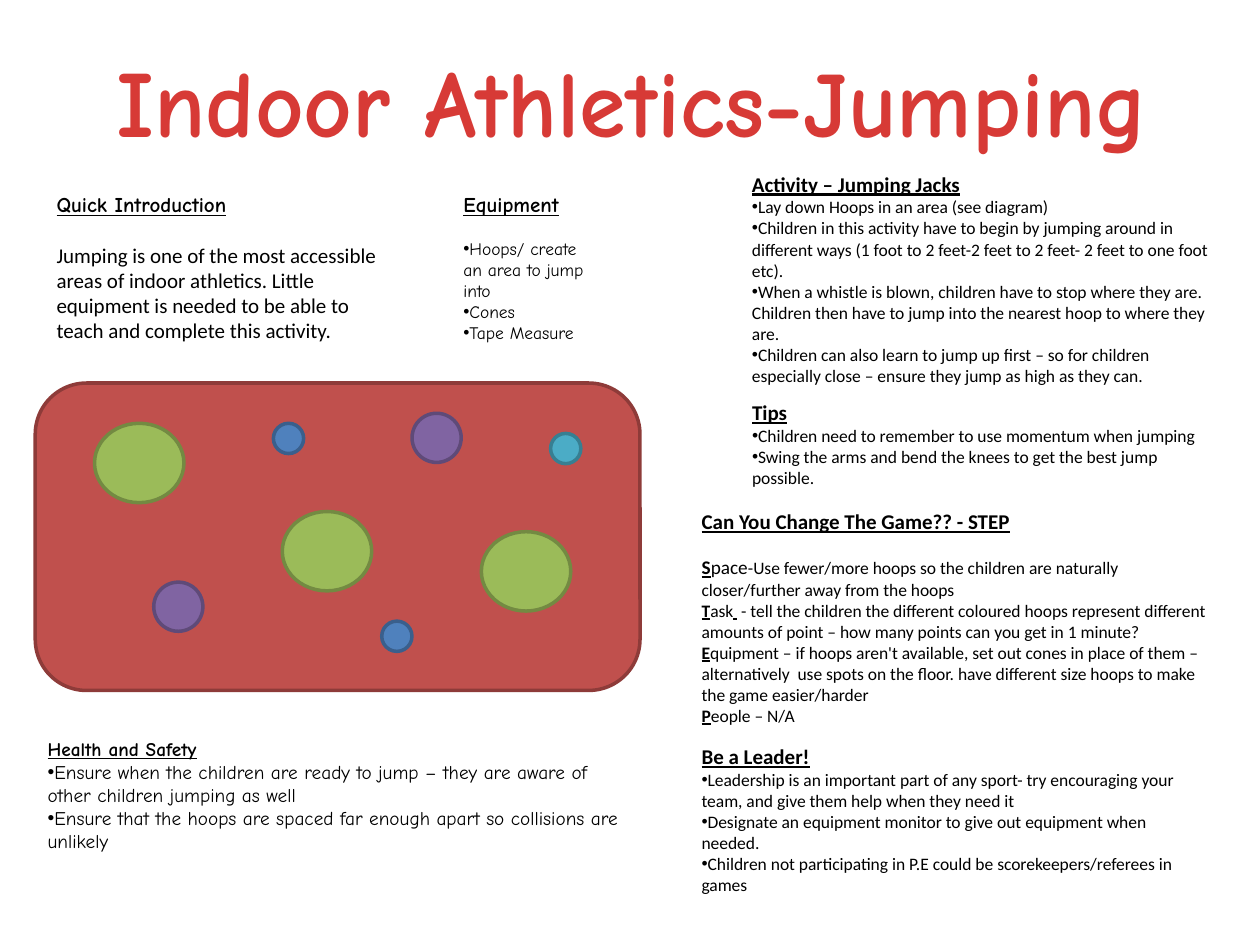
from pptx import Presentation
from pptx.dml.color import RGBColor
from pptx.enum.shapes import MSO_SHAPE
from pptx.enum.text import MSO_AUTO_SIZE, PP_ALIGN
from pptx.oxml.ns import qn
from pptx.util import Inches, Pt
from lxml import etree

OVAL = MSO_SHAPE.OVAL
ROUNDED = MSO_SHAPE.ROUNDED_RECTANGLE
GROW = MSO_AUTO_SIZE.SHAPE_TO_FIT_TEXT
CENTER = PP_ALIGN.CENTER

THEME = {
    "comic": "Comic Neue", "plain": "Calibri", "bullet": "Arial",
    "title": "D73A36", "text": "000000",
    "title_size": 54, "heading_size": 12, "safety_size": 11, "body_size": 10,
    "outline": 2,
    "mat": ("C0504D", "8E3B39"),
    "green": ("9BBB59", "738A42"),
    "purple": ("8064A2", "5F4A78"),
    "blue": ("4F81BD", "3A5F8C"),
    "aqua": ("4BACC6", "377F92"),
}
HEADING, BODY, SAFETY = THEME["heading_size"], THEME["body_size"], THEME["safety_size"]
COMIC, PLAIN = THEME["comic"], THEME["plain"]

TITLE = ("Indoor Athletics-Jumping", (0.03, 0.29, 9.97, 1.01))

SECTIONS = [
    {"heading": "Quick Introduction", "at": (0.35, 1.47, 2.91, 1.31),
     "font": COMIC, "body_font": PLAIN, "body_size": HEADING, "gap": 14.6, "bullets": False,
     "body": ["Jumping is one of the most accessible areas of indoor athletics. Little equipment "
              "is needed to be able to teach and complete this activity."]},
    {"heading": "Equipment", "at": (3.58, 1.47, 1.26, 1.31), "font": COMIC, "gap": 12,
     "body": ["Hoops/ create an area to jump into", "Cones", "Tape Measure"]},
    {"heading": "Activity – Jumping Jacks", "at": (5.87, 1.31, 3.86, 2.15),
     "body": ["Lay down Hoops in an area (see diagram)",
              "Children in this activity have to begin by jumping around in different ways "
              "(1 foot to 2 feet-2 feet to 2 feet- 2 feet to one foot etc).",
              "When a whistle is blown, children have to stop where they are. Children then "
              "have to jump into the nearest hoop to where they are.",
              "Children can also learn to jump up first – so for children especially close – "
              "ensure they jump as high as they can."]},
    {"heading": "Tips", "at": (5.87, 3.12, 3.82, 0.98),
     "body": ["Children need to remember to use momentum when jumping",
              "Swing the arms and bend the knees to get the best jump possible."]},
    {"heading": "Can You Change The Game?? - STEP", "at": (5.47, 3.99, 4.25, 1.83),
     "gap": 12.2, "bullets": False,
     "body": [[("S", True, 11), ("pace", False, 11),
               ("-Use fewer/more hoops so the children are naturally closer/further away "
                "from the hoops", False, BODY)],
              [("T", True, BODY), ("ask", False, BODY), (" ", True, BODY),
               (" - tell the children the different coloured hoops represent different amounts "
                "of point – how many points can you get in 1 minute?", False, BODY)],
              [("E", True, BODY),
               ("quipment – if hoops aren't available, set out cones in place of them – "
                "alternatively  use spots on the floor. have different size hoops to make the "
                "game easier/harder", False, BODY)],
              [("P", True, BODY), ("eople – N/A", False, BODY)]]},
    {"heading": "Health and Safety", "at": (0.28, 5.8, 4.8, 1.03),
     "font": COMIC, "heading_size": SAFETY, "body_size": SAFETY,
     "body": ["Ensure when the children are ready to jump – they are aware of other children "
              "jumping as well",
              "Ensure that the hoops are spaced far enough apart so collisions are unlikely"]},
    {"heading": "Be a Leader!", "at": (5.47, 5.85, 4.17, 1.65),
     "body": ["Leadership is an important part of any sport- try encouraging your team, and "
              "give them help when they need it",
              "Designate an equipment monitor to give out equipment when needed.",
              "Children not participating in P.E could be scorekeepers/referees in games"]},
]

MAT = (0.28, 3.04, 4.8, 2.44)
HOOP_SIZES = {"green": (0.71, 0.63), "purple": (0.39, 0.39),
              "blue": (0.24, 0.24), "aqua": (0.24, 0.24)}
HOOPS = [
    ("green", 0.75, 3.36), ("purple", 3.27, 3.28), ("green", 2.24, 4.06),
    ("blue", 2.17, 3.36), ("purple", 1.22, 4.62), ("blue", 3.03, 4.93),
    ("aqua", 4.37, 3.44), ("green", 3.82, 4.22),
]


def add_box(page, at):
    box = page.shapes.add_textbox(*map(Inches, at))
    box.text_frame.word_wrap = True
    box.text_frame.auto_size = GROW
    return box.text_frame


def style(span, font, size, bold=False, underline=False, colour=THEME["text"]):
    span.font.name = font
    span.font.size = Pt(size)
    span.font.bold = bold
    span.font.underline = underline
    span.font.color.rgb = RGBColor.from_string(colour)


def add_bullet(para):
    properties = para._p.get_or_add_pPr()
    etree.SubElement(properties, qn("a:buFont"), typeface=THEME["bullet"])
    etree.SubElement(properties, qn("a:buChar"), char="•")


def add_section(page, section):
    font = section.get("font", PLAIN)
    body_font = section.get("body_font", font)
    body_size = section.get("body_size", BODY)
    frame = add_box(page, section["at"])
    frame.text = section["heading"]
    style(frame.paragraphs[0].runs[0], font, section.get("heading_size", HEADING), True, True)
    for index, item in enumerate(section["body"]):
        para = frame.add_paragraph()
        if index == 0 and "gap" in section:
            para.space_before = Pt(section["gap"])
        if section.get("bullets", True):
            add_bullet(para)
        spans = [(item, False, body_size)] if isinstance(item, str) else item
        for words, marked, size in spans:
            span = para.add_run()
            span.text = words
            style(span, body_font, size, marked, marked)


def add_area(page, kind, at, colours):
    fill, line = colours
    shape = page.shapes.add_shape(kind, *map(Inches, at))
    shape.shadow.inherit = False
    shape.fill.solid()
    shape.fill.fore_color.rgb = RGBColor.from_string(fill)
    shape.line.color.rgb = RGBColor.from_string(line)
    shape.line.width = Pt(THEME["outline"])


def main():
    deck = Presentation()
    deck.slide_width, deck.slide_height = Inches(10), Inches(7.5)
    page = deck.slides.add_slide(deck.slide_layouts[6])

    for section in SECTIONS:
        add_section(page, section)

    words, at = TITLE
    frame = add_box(page, at)
    frame.text = words
    para = frame.paragraphs[0]
    para.alignment = CENTER
    style(para.runs[0], COMIC, THEME["title_size"], True, colour=THEME["title"])

    add_area(page, ROUNDED, MAT, THEME["mat"])
    for name, left, top in HOOPS:
        add_area(page, OVAL, (left, top, *HOOP_SIZES[name]), THEME[name])

    deck.save("out.pptx")


if __name__ == "__main__":
    main()
